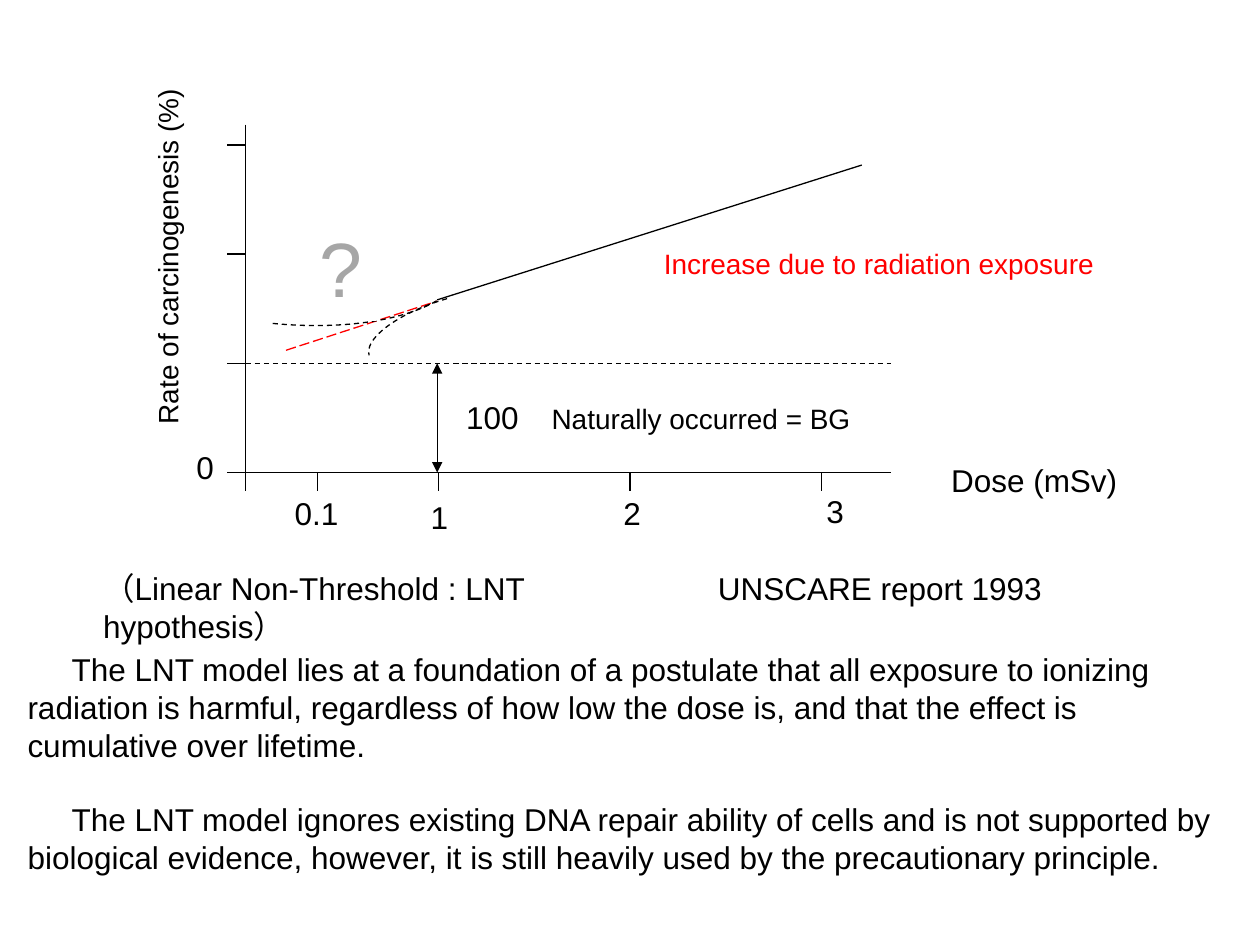
"""Build a slide on the linear non-threshold model of radiation dose and cancer."""
from lxml import etree
from pptx import Presentation
from pptx.dml.color import RGBColor
from pptx.enum.dml import MSO_LINE
from pptx.enum.shapes import MSO_CONNECTOR, MSO_SHAPE
from pptx.enum.text import MSO_ANCHOR, MSO_AUTO_SIZE, PP_ALIGN
from pptx.oxml.ns import qn
from pptx.util import Inches, Pt

LINE, ARC, RECT = MSO_CONNECTOR.STRAIGHT, MSO_SHAPE.ARC, MSO_SHAPE.RECTANGLE
DASH, LONG = MSO_LINE.DASH, MSO_LINE.LONG_DASH
FIT, TOP, LEFT = MSO_AUTO_SIZE.SHAPE_TO_FIT_TEXT, MSO_ANCHOR.TOP, PP_ALIGN.LEFT
HUES = {"ink": "000000", "red": "FF0000", "gray": "A6A6A6", "white": "FFFFFF"}

AXIS, BASE, END = 1.95, 3.75, 7.07
TICK = 0.15
ROWS = [BASE - 2.6 / 3 * row for row in range(4)]
DOSES = [("0.1", 2.52, 2.24, 0.55, 3.87), ("1", 3.48, 3.32, 0.34, 3.9),
         ("2", 5, 4.85, 0.34, 3.87), ("3", 6.52, 6.46, 0.34, 3.86)]

deck = Presentation()
deck.slide_width, deck.slide_height = Inches(10), Inches(7.5)
slide = deck.slides.add_slide(deck.slide_layouts[6])
shapes = slide.shapes


def draw(x1, y1, x2, y2, hue="ink", dash=None):
    line = shapes.add_connector(LINE, Inches(x1), Inches(y1), Inches(x2), Inches(y2))
    line.line.color.rgb = RGBColor.from_string(HUES[hue])
    line.line.width = Pt(0.75)
    if dash:
        line.line.dash_style = dash
    etree.SubElement(line._element.spPr, qn("a:effectLst"))
    return line


def write(shape, text, size=18, hue="ink", wrap=False):
    frame = shape.text_frame
    frame.text = text
    frame.word_wrap = wrap
    frame.auto_size = FIT
    frame.vertical_anchor = TOP
    for para in frame.paragraphs:
        para.alignment = LEFT
        for run in para.runs:
            run.font.name = "Arial"
            run.font.size = Pt(size)
            run.font.color.rgb = RGBColor.from_string(HUES[hue])
    return frame


draw(AXIS, ROWS[1], END, ROWS[1], dash=DASH)
draw(3.47, 2.38, 6.84, 1.31)
draw(AXIS, 0.99, AXIS, BASE)
draw(AXIS, BASE, END, BASE)
for row in ROWS:
    draw(AXIS, row, AXIS - TICK, row)
for spot in [AXIS] + [dose[1] for dose in DOSES]:
    draw(spot, BASE, spot, BASE + TICK)

arrow = draw(3.47, ROWS[1], 3.47, BASE)
pen = arrow.line._get_or_add_ln()
for end in ("a:headEnd", "a:tailEnd"):
    etree.SubElement(pen, qn(end), type="triangle")

draw(2.27, 2.78, 3.47, 2.39, "red", LONG)

for left, top, width, height, turn, start, flip in [
        (2.9, 2.36, 1.44, 0.52, 343.8, None, True),
        (1.61, 0.48, 1.23, 2.95, 95.7, 170.14, False)]:
    curve = shapes.add_shape(ARC, Inches(left), Inches(top), Inches(width), Inches(height))
    curve.shadow.inherit = False
    curve.fill.background()
    curve.line.color.rgb = RGBColor.from_string(HUES["ink"])
    curve.line.width = Pt(0.75)
    curve.line.dash_style = DASH
    curve.rotation = turn
    if start:
        curve.adjustments[0] = start
    if flip:
        curve._element.spPr.xfrm.set("flipH", "1")

query = shapes.add_shape(RECT, Inches(2.44), Inches(1.7), Inches(0.55), Inches(0.84))
query.shadow.inherit = False
query.fill.background()
query.line.color.rgb = RGBColor.from_string(HUES["white"])
query.line.width = Pt(0.75)
write(query, "?", 44, "gray")

labels = [(text, left, top, width, 18, "ink") for text, _, left, width, top in DOSES]
labels += [
    ("0", 1.46, 3.51, 0.34, 18, "ink"),
    ("100", 3.6, 3.11, 0.62, 18, "ink"),
    ("Rate of carcinogenesis (%)", -0.12, 1.83, 2.9, 16, "ink"),
    ("Increase due to radiation exposure", 5.17, 1.91, 3.66, 16, "red"),
    ("Naturally occurred = BG", 4.28, 3.14, 2.6, 16, "ink"),
    ("Dose (mSv)", 7.45, 3.61, 1.53, 18, "ink"),
    ("（Linear Non-Threshold : LNT hypothesis）", 0.72, 4.47, 4.85, 18, "ink"),
    ("UNSCARE report 1993", 5.6, 4.47, 2.8, 18, "ink"),
]
for text, left, top, width, size, hue in labels:
    high = 0.4 if size == 18 else 0.37
    box = shapes.add_textbox(Inches(left), Inches(top), Inches(width), Inches(high))
    write(box, text, size, hue, wrap="LNT" in text)
    if text.startswith("Rate"):
        box.rotation = 270

body = shapes.add_textbox(Inches(0.12), Inches(5.11), Inches(9.69), Inches(1.92))
notes = write(body, "The LNT model lies at a foundation of a postulate that all exposure to "
              "ionizing radiation is harmful, regardless of how low the dose is, and that "
              "the effect is cumulative over lifetime.\n"
              "The LNT model ignores existing DNA repair ability of cells and is not "
              "supported by biological evidence, however, it is still heavily used by the "
              "precautionary principle.", wrap=True)
for para in notes.paragraphs:
    para._p.get_or_add_pPr().set("indent", str(Inches(0.35)))
notes.paragraphs[1].space_before = Pt(21)

deck.save("out.pptx")
